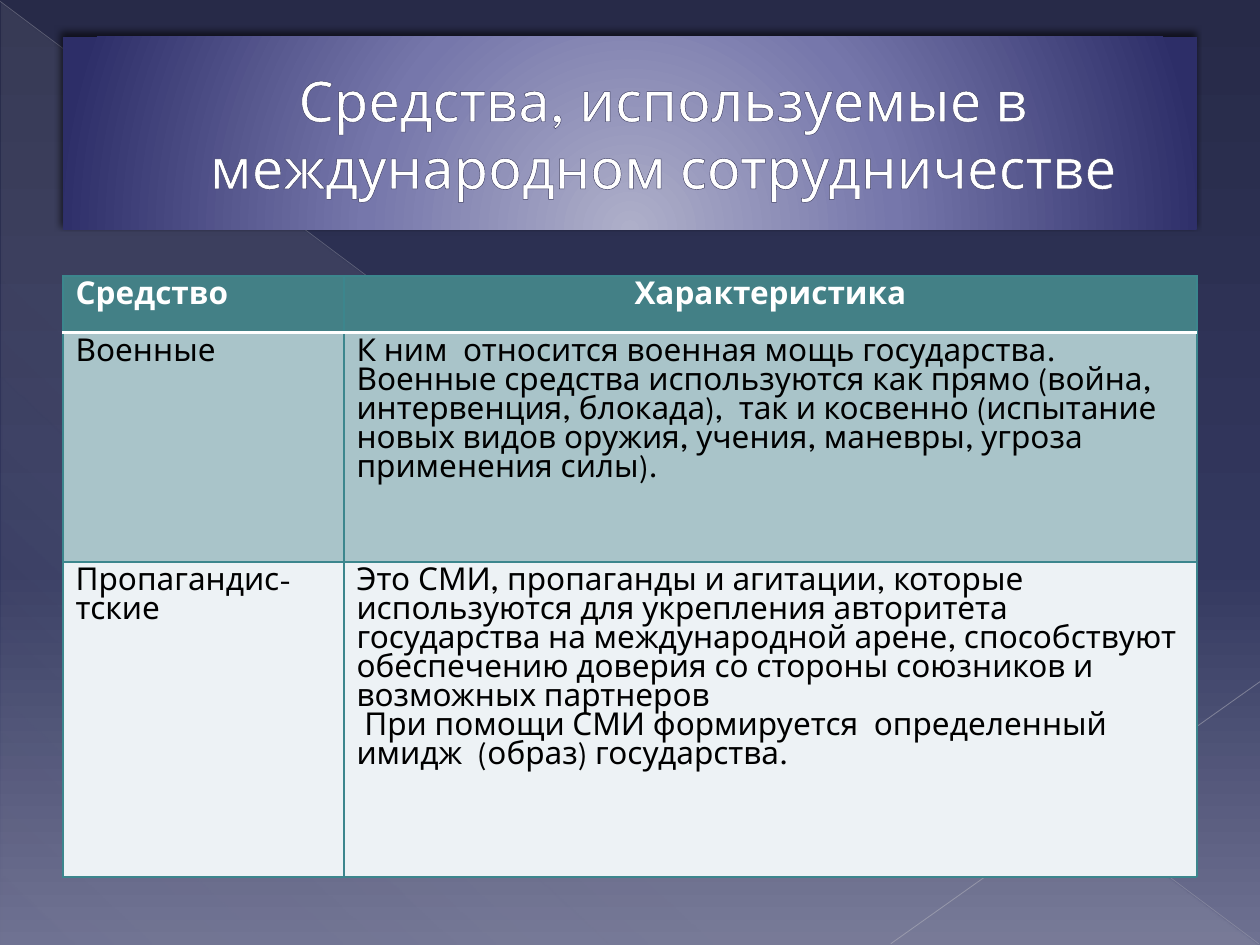
"""Build a slide with a table on the means of international cooperation."""
from lxml.etree import fromstring
from pptx import Presentation
from pptx.dml.color import RGBColor
from pptx.enum.shapes import MSO_CONNECTOR as CONNECTOR, MSO_SHAPE as SHAPE
from pptx.enum.text import MSO_ANCHOR as ANCHOR, PP_ALIGN as ALIGN
from pptx.util import Inches, Pt

TITLE = "Средства, используемые в международном сотрудничестве"
ROWS = [
    ("Средство", "Характеристика"),
    ("Военные",
     "К ним  относится военная мощь государства. Военные средства используются "
     "как прямо (война, интервенция, блокада),  так и косвенно (испытание новых "
     "видов оружия, учения, маневры, угроза применения силы)."),
    ("Пропагандис-\nтские",
     "Это СМИ, пропаганды и агитации, которые используются для укрепления "
     "авторитета государства на международной арене, способствуют обеспечению "
     "доверия со стороны союзников и возможных партнеров\n"
     " При помощи СМИ формируется  определенный имидж  (образ) государства."),
]
COLUMN_WIDTHS = (2.23, 6.77)
ROW_HEIGHTS = (0.45, 1.82, 2.5)
FONT = "League Spartan"
WHITE = RGBColor(0xFF, 0xFF, 0xFF)
BLACK = RGBColor(0, 0, 0)
TEAL = RGBColor(0x43, 0x80, 0x86)
BORDER = RGBColor(0x3C, 0x86, 0x8D)
OUTLINE = RGBColor(0x3A, 0x3A, 0x60)
ROW_FILLS = (TEAL, RGBColor(0xA9, 0xC4, 0xC9), RGBColor(0xED, 0xF2, 0xF5))
BACKGROUND_STOPS = [(0, "272A48", 100), (60, "33385F", 100), (100, "6E7191", 100)]
TRIANGLE_STOPS = [(0, "DEDEDE", 10), (70, "DEDEDE", 8), (100, "DEDEDE", 1)]
TITLE_STOPS = [(0, "AEAFC9", 100), (46, "7677AB", 100), (100, "2D2E68", 100)]
LINES = [
    ((0, 0.01), (9.99, 7.49), RGBColor(0xB7, 0xB7, 0xBE), 0.39, 35),
    ((10, 5.41), (7.07, 7.49), RGBColor(0xBF, 0xBF, 0xC5), 0.47, 45),
]


def element(tag, attributes="", content=""):
    namespace = 'xmlns:a="http://schemas.openxmlformats.org/drawingml/2006/main"'
    return fromstring(f"<a:{tag} {namespace} {attributes}>{content}</a:{tag}>")


def color_xml(color, alpha=100):
    return f'<a:srgbClr val="{color}"><a:alpha val="{alpha * 1000}"/></a:srgbClr>'


def set_gradient(fill, properties, stops, direction):
    fill.gradient()
    stop_xml = "".join(f'<a:gs pos="{position * 1000}">{color_xml(color, alpha)}</a:gs>'
                       for position, color, alpha in stops)
    properties.replace(
        properties.find("{*}gradFill"),
        element("gradFill", 'rotWithShape="1"', f"<a:gsLst>{stop_xml}</a:gsLst>{direction}"))


def linear(angle):
    return f'<a:lin ang="{angle * 60000}" scaled="0"/>'


def line_element(tag, color, width, alpha=100):
    return element(tag, f'w="{Pt(width)}"',
                   f"<a:solidFill>{color_xml(color, alpha)}</a:solidFill>")


def add_backdrop(slide):
    fill = slide.background.fill
    set_gradient(fill, slide.element.find(".//{*}bgPr"), BACKGROUND_STOPS, linear(90))
    triangle = slide.shapes.add_shape(SHAPE.RIGHT_TRIANGLE, Inches(0.01), Inches(0.02),
                                      Inches(9.98), Inches(7.48))
    triangle.shadow.inherit = False
    triangle.line.fill.background()
    set_gradient(triangle.fill, triangle.element.spPr, TRIANGLE_STOPS, linear(133))
    for start, end, color, width, alpha in LINES:
        connector = slide.shapes.add_connector(
            CONNECTOR.STRAIGHT, *(Inches(value) for value in start + end))
        properties = connector.element.spPr
        properties.append(line_element("ln", color, width, alpha))
        properties.append(element("effectLst"))


def add_title(slide):
    title = slide.shapes.title
    title.element.getparent().append(title.element)
    title.left, title.top, title.width, title.height = map(Inches, (0.5, 0.29, 9, 1.53))
    properties = title.element.spPr
    set_gradient(title.fill, properties, TITLE_STOPS,
                 '<a:path path="circle"><a:fillToRect l="50000" t="155000" '
                 'r="50000" b="-55000"/></a:path>')
    properties.append(element(
        "effectLst", "",
        f'<a:outerShdw blurRad="{Pt(4)}" dist="{Pt(3)}" dir="{245 * 60000}" '
        f'rotWithShape="0">{color_xml(BLACK, 60)}</a:outerShdw>'))
    frame = title.text_frame
    frame.text = TITLE
    frame.word_wrap = True
    frame.vertical_anchor = ANCHOR.MIDDLE
    paragraph = frame.paragraphs[0]
    format_paragraph(paragraph, 32, WHITE, False, ALIGN.CENTER)
    paragraph_properties = paragraph._p.get_or_add_pPr()
    paragraph_properties.set("marL", str(Inches(0.53)))
    paragraph_properties.set("indent", "0")
    paragraph.runs[0]._r.get_or_add_rPr().insert(0, line_element("ln", OUTLINE, 0.5))


def format_paragraph(paragraph, size, color, bold, alignment):
    paragraph.alignment = alignment
    paragraph.line_spacing = 1.0
    for run in paragraph.runs:
        font = run.font
        font.name, font.size, font.bold = FONT, Pt(size), bold
        font.color.rgb = color


def format_cell(cell, row, column):
    header = row == 0
    edges = {side: (BORDER, 0.75) for side in ("lnL", "lnR", "lnT", "lnB")}
    if row < 2:
        edges["lnB" if header else "lnT"] = (WHITE, 2)
    properties = cell._tc.get_or_add_tcPr()
    for side, (color, width) in edges.items():
        properties.append(line_element(side, color, width))
    cell.fill.solid()
    cell.fill.fore_color.rgb = ROW_FILLS[row]
    alignment = ALIGN.CENTER if header and column == 1 else ALIGN.LEFT
    for paragraph in cell.text_frame.paragraphs:
        format_paragraph(paragraph, 18, WHITE if header else BLACK, header, alignment)


def add_means_table(slide):
    table = slide.shapes.add_table(
        len(ROWS), len(COLUMN_WIDTHS), Inches(0.5), Inches(2.19),
        Inches(sum(COLUMN_WIDTHS)), Inches(sum(ROW_HEIGHTS))).table
    for column, width in zip(table.columns, COLUMN_WIDTHS):
        column.width = Inches(width)
    for row, height in zip(table.rows, ROW_HEIGHTS):
        row.height = Inches(height)
    for row, texts in enumerate(ROWS):
        for column, text in enumerate(texts):
            cell = table.cell(row, column)
            cell.text_frame.text = text
            format_cell(cell, row, column)


def main():
    presentation = Presentation()
    presentation.slide_width, presentation.slide_height = Inches(10), Inches(7.5)
    slide = presentation.slides.add_slide(presentation.slide_layouts[5])
    add_backdrop(slide)
    add_title(slide)
    add_means_table(slide)
    presentation.save("out.pptx")


if __name__ == "__main__":
    main()
